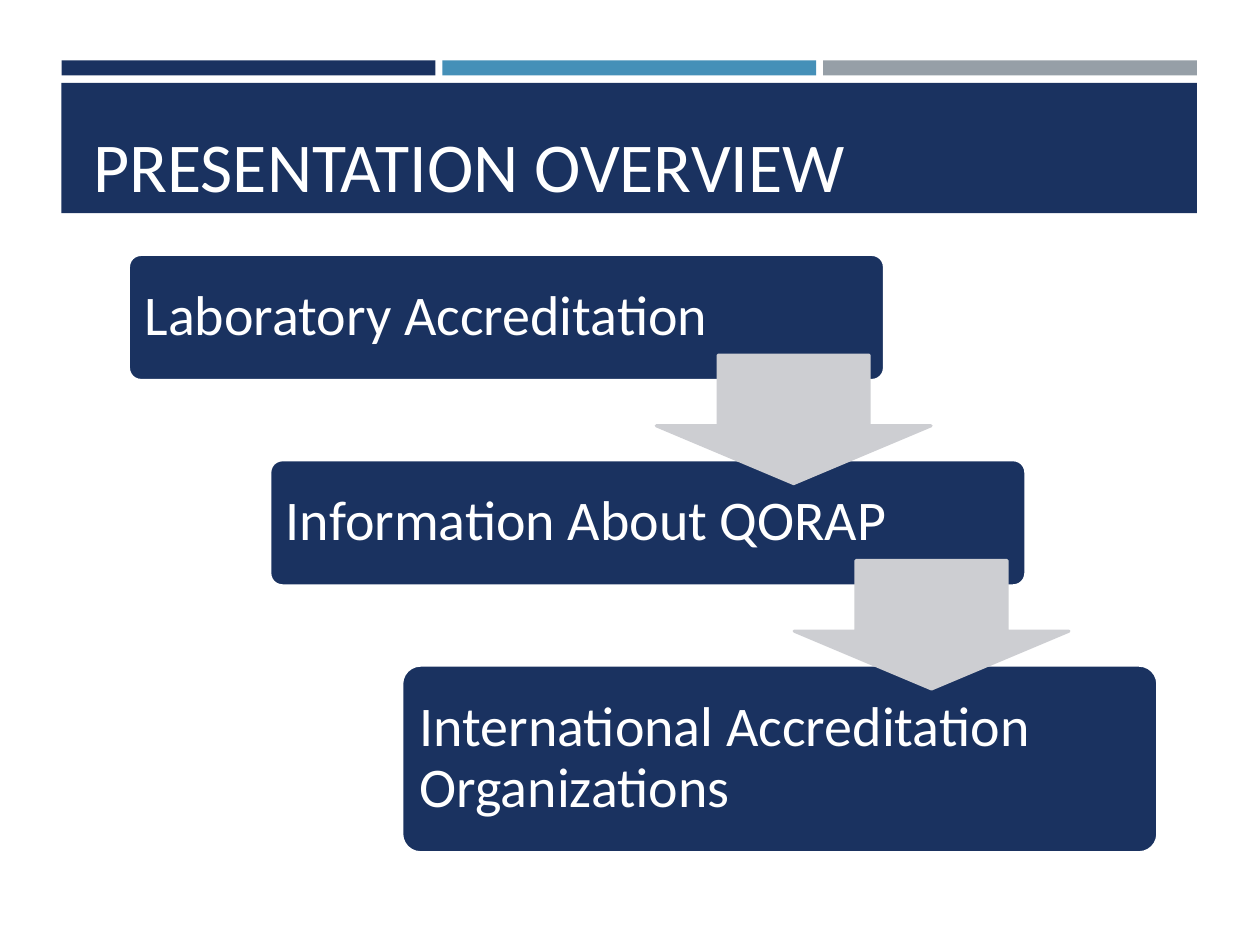
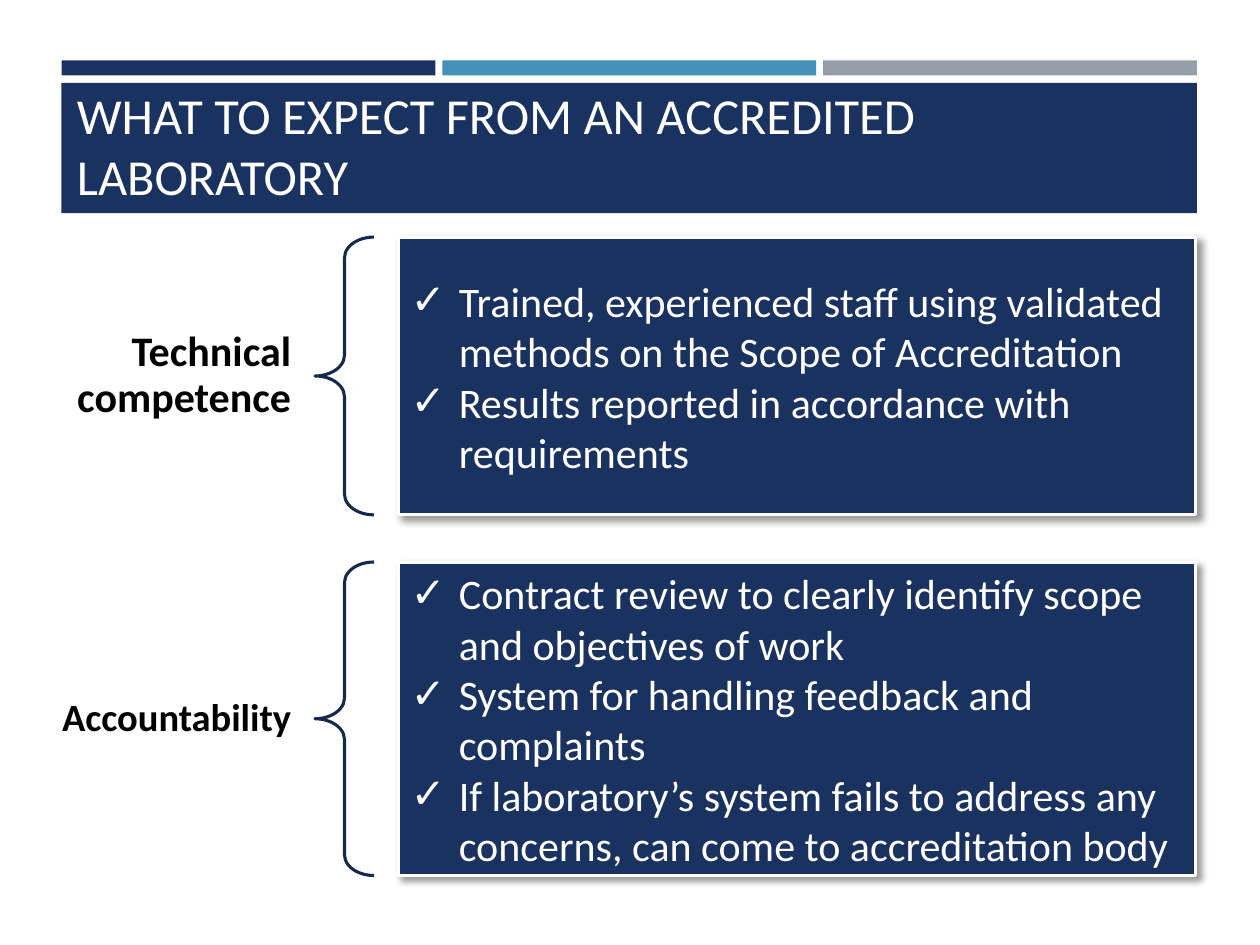
from dataclasses import dataclass

from lxml.etree import SubElement
from pptx import Presentation
from pptx.dml.color import RGBColor
from pptx.enum.shapes import MSO_SHAPE as Preset
from pptx.enum.text import MSO_ANCHOR as Anchor, MSO_AUTO_SIZE as AutoSize, PP_ALIGN as Align
from pptx.oxml.ns import qn
from pptx.util import Cm, Pt


@dataclass(frozen=True)
class Theme:
    font: str = "Calibri"
    navy: str = "1A3260"
    blue: str = "4590B8"
    grey: str = "969FA7"
    arrow: str = "CDCED2"
    brace: str = "15284D"
    white: str = "FFFFFF"
    black: str = "000000"
    overview_title_size: float = 40
    expectations_title_size: float = 28.8
    step_size: float = 32
    list_size: float = 24
    outline: float = 1.75


@dataclass(frozen=True)
class Area:
    """A rectangle in centimetres."""
    left: float
    top: float
    width: float
    height: float


@dataclass(frozen=True)
class Step:
    text: str
    left: float
    height: float


@dataclass(frozen=True)
class Topic:
    label: str
    label_size: float
    height: float
    points: tuple[str, ...]


THEME = Theme()
BAND = Area(1.24, 1.22, 22.89, 0.3)
TITLE_BAND = Area(1.24, 1.67, 22.89, 2.63)
BAND_GAP = 0.14

STEPS = (
    Step("Laboratory Accreditation", 2.59, 2.54),
    Step("Information About QORAP", 5.44, 2.54),
    Step("International Accreditation Organizations", 8.1, 3.78),
)
STEP_TOP, STEP_PITCH, STEP_WIDTH = 5.13, 4.14, 15.24
FIRST_ARROW = Area(13.23, 7.16, 5.54, 2.59)
ARROW_SHIFT = 2.78

TOPICS = (
    Topic("Technical competence", 24, 5.6, (
        "Trained, experienced staff using validated methods on the Scope of Accreditation",
        "Results reported in accordance with requirements",
    )),
    Topic("Accountability", 22, 6.32, (
        "Contract review to clearly identify scope and objectives of work",
        "System for handling feedback and complaints",
        "If laboratory’s system fails to address any concerns, can come to accreditation body",
    )),
)
TOPIC_TOP, TOPIC_GAP = 4.78, 0.95
LABEL_WIDTH, LABEL_HEIGHT = 6.35, 2.31
BRACE_WIDTH = 1.19
LIST_LEFT, LIST_WIDTH = 8.03, 16.08
BULLET_INDENT = 0.97


# Shared helpers
def rgb(colour: str) -> RGBColor:
    return RGBColor.from_string(colour)


def place(shape, area: Area) -> None:
    shape.left, shape.top = Cm(area.left), Cm(area.top)
    shape.width, shape.height = Cm(area.width), Cm(area.height)


def paint(shape, fill: str | None, line: str | None) -> None:
    shape.shadow.inherit = False
    if fill:
        shape.fill.solid()
        shape.fill.fore_color.rgb = rgb(fill)
    else:
        shape.fill.background()
    if line:
        shape.line.color.rgb = rgb(line)
        shape.line.width = Pt(THEME.outline)
    else:
        shape.line.fill.background()


def add_preset(page, preset, area: Area, fill: str | None, line: str | None = None,
               adjustments: tuple[float, ...] = ()):
    shape = page.shapes.add_shape(preset, Cm(area.left), Cm(area.top),
                                  Cm(area.width), Cm(area.height))
    for index, value in enumerate(adjustments):
        shape.adjustments[index] = value
    paint(shape, fill, line)
    return shape


def set_frame(shape, anchor, insets: tuple[float, float, float, float]):
    """Insets run left, top, right, bottom."""
    frame = shape.text_frame
    frame.word_wrap = True
    frame.auto_size = AutoSize.NONE
    frame.vertical_anchor = anchor
    (frame.margin_left, frame.margin_top,
     frame.margin_right, frame.margin_bottom) = map(Cm, insets)
    return frame


def write(para, text: str, size: float, colour: str, align=Align.LEFT,
          bold: bool = False, spacing: float = 1.0) -> None:
    para.text = text
    para.alignment = align
    para.line_spacing = spacing
    para.space_before = Pt(0)
    para.font.name = THEME.font
    para.font.size = Pt(size)
    para.font.bold = bold
    para.font.color.rgb = rgb(colour)


def add_shadow(shape) -> None:
    effects = shape.element.spPr.find(qn("a:effectLst"))
    shadow = SubElement(effects, qn("a:outerShdw"), blurRad=str(Pt(4)), dist=str(Pt(3)),
                        dir=str(45 * 60000), algn="tl", rotWithShape="0")
    colour = SubElement(shadow, qn("a:srgbClr"), val=THEME.black)
    SubElement(colour, qn("a:alpha"), val="40000")


def add_check(para) -> None:
    properties = para._p.get_or_add_pPr()
    properties.set("marL", str(Cm(BULLET_INDENT)))
    properties.set("indent", str(-Cm(BULLET_INDENT)))
    SubElement(properties, qn("a:buChar"), char="✓")
    # Bullets come before the default run properties
    properties.append(properties.find(qn("a:defRPr")))


def set_title(page, text: str, size: float, area: Area) -> None:
    title = page.shapes.title
    place(title, area)
    frame = set_frame(title, Anchor.BOTTOM, (0.25, 0.13, 0.25, 0.13))
    write(frame.paragraphs[0], text, size, THEME.white)


def add_master_bands(deck, page) -> None:
    """Draw the bands on a page, then move them to the master for all pages."""
    width = (BAND.width - 2 * BAND_GAP) / 3
    bands = [add_preset(page, Preset.RECTANGLE, TITLE_BAND, THEME.navy)]
    for index, colour in enumerate((THEME.navy, THEME.blue, THEME.grey)):
        area = Area(BAND.left + index * (width + BAND_GAP), BAND.top, width, BAND.height)
        bands.append(add_preset(page, Preset.RECTANGLE, area, colour))
    for band in bands:
        deck.slide_master.shapes.element.append(band.element)


# Slide 1: descending steps
def add_arrow(page, index: int) -> None:
    area = Area(FIRST_ARROW.left + index * ARROW_SHIFT, FIRST_ARROW.top + index * STEP_PITCH,
                FIRST_ARROW.width, FIRST_ARROW.height)
    add_preset(page, Preset.DOWN_ARROW, area, THEME.arrow, THEME.arrow, (0.55, 0.45))


def build_overview(page) -> None:
    set_title(page, "PRESENTATION OVERVIEW", THEME.overview_title_size,
              Area(1.63, 1.91, 22.2, 2.39))
    for index, step in enumerate(STEPS):
        area = Area(step.left, STEP_TOP + index * STEP_PITCH, STEP_WIDTH, step.height)
        box = add_preset(page, Preset.ROUNDED_RECTANGLE, area, THEME.navy, THEME.white, (0.1,))
        frame = set_frame(box, Anchor.MIDDLE, (0.25, 0.33, 0.51, 0.33))
        write(frame.paragraphs[0], step.text, THEME.step_size, THEME.white, spacing=0.9)
        if index:
            add_arrow(page, index - 1)


# Slide 2: labels, braces and check lists
def fill_topic(page, topic: Topic, top: float, label, box) -> None:
    place(label, Area(0, top + (topic.height - LABEL_HEIGHT) / 2, LABEL_WIDTH, LABEL_HEIGHT))
    frame = set_frame(label, Anchor.MIDDLE, (0.48, 0.18, 0.48, 0.18))
    write(frame.paragraphs[0], topic.label, topic.label_size, THEME.black,
          Align.RIGHT, bold=True, spacing=0.9)

    add_preset(page, Preset.LEFT_BRACE, Area(LABEL_WIDTH, top, BRACE_WIDTH, topic.height),
               None, THEME.brace, (0.35, 0.5))

    place(box, Area(LIST_LEFT, top, LIST_WIDTH, topic.height))
    paint(box, THEME.navy, THEME.white)
    add_shadow(box)
    frame = set_frame(box, Anchor.MIDDLE, (0.25, 0.25, 0.25, 0.25))
    for index, point in enumerate(topic.points):
        para = frame.add_paragraph() if index else frame.paragraphs[0]
        write(para, point, THEME.list_size, THEME.white)
        add_check(para)


def build_expectations(page) -> None:
    set_title(page, "WHAT TO EXPECT FROM AN ACCREDITED LABORATORY",
              THEME.expectations_title_size, Area(1.3, 2.16, 22.61, 2.11))
    _, *bodies = page.placeholders
    top = TOPIC_TOP
    for topic, label, box in zip(TOPICS, bodies[::2], bodies[1::2]):
        fill_topic(page, topic, top, label, box)
        top += topic.height + TOPIC_GAP


def main() -> None:
    deck = Presentation()
    deck.slide_width, deck.slide_height = Cm(25.4), Cm(19.05)
    layouts = deck.slide_layouts
    overview = deck.slides.add_slide(layouts.get_by_name("Title Only"))
    add_master_bands(deck, overview)
    build_overview(overview)
    build_expectations(deck.slides.add_slide(layouts.get_by_name("Comparison")))
    deck.save("out.pptx")


if __name__ == "__main__":
    main()
